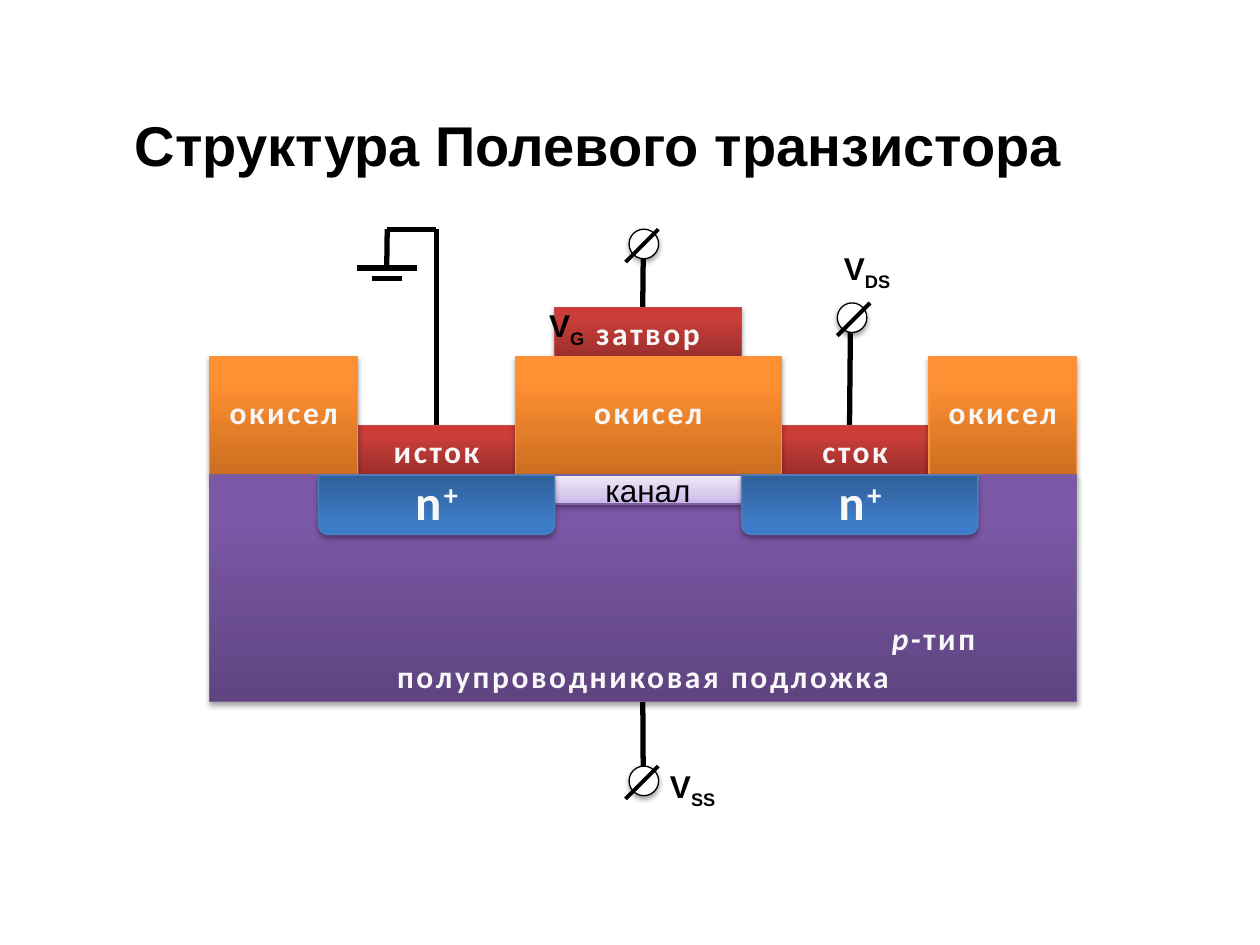
import copy
import lxml.etree
import pptx
import pptx.util
import pptx.dml.color
import pptx.enum.shapes
import pptx.enum.text
import pptx.oxml.ns

Pt = pptx.util.Pt
RGB = pptx.dml.color.RGBColor
Kind = pptx.enum.shapes.MSO_SHAPE
Align = pptx.enum.text.PP_ALIGN
Fit = pptx.enum.text.MSO_AUTO_SIZE
qn = pptx.oxml.ns.qn
sub = lxml.etree.SubElement

BLACK = RGB(0, 0, 0)
WHITE = RGB(255, 255, 255)
PALE = RGB(0xF8, 0xF8, 0xF8)
METAL = [RGB(0x9C, 0x2F, 0x2D), RGB(0xCB, 0x3E, 0x3A), RGB(0xCE, 0x3B, 0x37)]
OXIDE = [RGB(0xCC, 0x6E, 0x20), RGB(0xFF, 0x90, 0x34), RGB(0xFF, 0x91, 0x36)]
BASE = [RGB(0x5F, 0x44, 0x80), RGB(0x7B, 0x58, 0xA6), RGB(0x7C, 0x57, 0xA8)]
CANAL = [RGB(0xC9, 0xB5, 0xE8), RGB(0xD8, 0xCB, 0xEE), RGB(0xF0, 0xEA, 0xF9)]
DOPED = [RGB(0x2F, 0x5F, 0x99), RGB(0x3D, 0x7C, 0xC7), RGB(0x3A, 0x7C, 0xCB)]
RED = RGB(0xBF, 0x4C, 0x48)
ORANGE = RGB(0xF6, 0x92, 0x40)
PURPLE = RGB(0x7D, 0x60, 0xA0)
BLUE = RGB(0x4B, 0x7E, 0xBC)

deck = pptx.Presentation()
deck.slide_width, deck.slide_height = Pt(720), Pt(540)
slide = deck.slides.add_slide(deck.slide_layouts[5])
shapes = slide.shapes


def add_line(x1, y1, x2, y2, width):
    line = shapes.add_connector(
        pptx.enum.shapes.MSO_CONNECTOR.STRAIGHT, Pt(x1), Pt(y1), Pt(x2), Pt(y2))
    line.line.color.rgb = BLACK
    line.line.width = Pt(width)
    sub(line._element.spPr, qn("a:effectLst"))


def add_block(kind, x, y, w, h, edge, alpha, drop):
    block = shapes.add_shape(kind, Pt(x), Pt(y), Pt(w), Pt(h))
    block.line.color.rgb = edge
    block.line.width = Pt(0.75)
    block.shadow.inherit = False
    glow = sub(block._element.spPr.find(qn("a:effectLst")), qn("a:outerShdw"),
               blurRad=str(int(Pt(3.1))), dist=str(int(Pt(drop))),
               dir="5400000", rotWithShape="0")
    tint = sub(glow, qn("a:srgbClr"), val=str(BLACK))
    sub(tint, qn("a:alpha"), val=str(alpha * 1000))
    return block


title = shapes.title
title.left, title.top, title.width, title.height = Pt(69.8), Pt(59.8), Pt(548), Pt(46)
frame = title.text_frame
frame.text = "Структура Полевого транзистора"
frame.word_wrap = False
frame.auto_size = Fit.NONE
frame.vertical_anchor = pptx.enum.text.MSO_ANCHOR.TOP
par = frame.paragraphs[0]
par.alignment = Align.LEFT
par.font.name, par.font.size, par.font.bold = "Arial", Pt(32), True
par.font.color.rgb = BLACK

wires = [
    (367.2, 381, 367.6, 449.5),
    (249.3, 131, 249.3, 250),
    (367.6, 143.3, 367.2, 182),
    (486, 182, 485.4, 250),
    (249.3, 131, 221.3, 131),
    (221.3, 131, 221, 152.8),
    (204.2, 153.2, 238.2, 153.2),
    (212.6, 159, 229.6, 159),
]
for wire in wires:
    add_line(*wire, 3)

RECT, ROUND = Kind.RECTANGLE, Kind.ROUND_2_SAME_RECTANGLE
blocks = [
    (RECT, 204.5, 243.3, 90, 28.2, METAL, RED),
    (RECT, 446.4, 243.3, 84.4, 28.2, METAL, RED),
    (RECT, 317, 175.6, 106.6, 28.2, METAL, RED),
    (RECT, 119.9, 203.8, 84.4, 67.7, OXIDE, ORANGE),
    (RECT, 530.8, 203.8, 84.4, 67.7, OXIDE, ORANGE),
    (RECT, 294.5, 203.8, 151.9, 67.7, OXIDE, ORANGE),
    (RECT, 119.9, 271.5, 495.3, 129.5, BASE, PURPLE),
    (RECT, 317, 271.5, 106.6, 16.6, CANAL, PURPLE),
    (ROUND, 182, 271.5, 135, 33.9, DOPED, BLUE),
    (ROUND, 423.8, 271.5, 135, 33.9, DOPED, BLUE),
]
for kind, x, y, w, h, shades, edge in blocks:
    light = shades is CANAL
    block = add_block(kind, x, y, w, h, edge, 38 if light else 35, 1.6 if light else 1.8)
    block.rotation = 180 if kind == ROUND else 0
    block.fill.gradient()
    block.fill.gradient_angle = 90
    stops = block._element.spPr.find(".//" + qn("a:gsLst"))
    stops.insert(1, copy.deepcopy(stops[0]))
    spots = (0, 0.35 if light else 0.8, 1)
    for stop, spot, shade in zip(block.fill.gradient_stops, spots, shades):
        stop.position = spot
        stop.color.rgb = shade

for x, y, shift in [(359.5, 131, -2), (478.5, 173.1, 0), (359.5, 437.8, -2)]:
    ring = add_block(Kind.OVAL, x, y, 16.9, 16.9, BLACK, 38, 1.6)
    ring.fill.solid()
    ring.fill.fore_color.rgb = WHITE
    add_line(x + shift, y + 18.7, x + shift + 18.7, y, 2.25)

MID, LEFT = Align.CENTER, Align.LEFT
PART = ("Calibri", 18, PALE, True, MID, 150)
ZONE = ("Calibri", 28, PALE, True, MID, 150)
TYPE = ("Calibri", 18, PALE, True, LEFT, 150)
PLAIN = ("Arial", 18, BLACK, False, MID, 0)
VOLT = ("Arial", 18, BLACK, True, LEFT, 0)
labels = [
    (204.5, 243.3, 90, "исток", "", 0, PART),
    (317, 175.6, 106.6, "затвор", "", 0, PART),
    (446.4, 243.3, 84.4, "сток", "", 0, PART),
    (204.5, 371.8, 326.3, "полупроводниковая подложка", "", 0, PART),
    (317, 265.8, 106.6, "канал", "", 0, PLAIN),
    (119.9, 221, 84.4, "окисел", "", 0, PART),
    (294.5, 221, 151.9, "окисел", "", 0, PART),
    (530.8, 221, 84.4, "окисел", "", 0, PART),
    (204.5, 265.8, 90, "n", "+", 30, ZONE),
    (446.4, 265.8, 90, "n", "+", 30, ZONE),
    (502.6, 350, 112.6, "p", "-тип", 0, TYPE),
    (306.7, 171.4, 45, "V", "G", -25, VOLT),
    (475.2, 139, 55.4, "V", "DS", -25, VOLT),
    (375.8, 434.9, 47.5, "V", "SS", -25, VOLT),
]
for x, y, w, head, tail, shift, (face, size, color, bold, align, gap) in labels:
    box = shapes.add_textbox(Pt(x), Pt(y), Pt(w), Pt(41 if size == 28 else 29))
    box.text_frame.word_wrap = True
    box.text_frame.auto_size = Fit.SHAPE_TO_FIT_TEXT
    par = box.text_frame.paragraphs[0]
    par.alignment = align
    par.font.name, par.font.size, par.font.bold = face, Pt(size), bold
    par.font.color.rgb = color
    for text in filter(None, (head, tail)):
        run = par.add_run()
        run.text = text
        if gap:
            run._r.get_or_add_rPr().set("spc", str(gap))
        if text == tail and shift:
            run._r.get_or_add_rPr().set("baseline", str(shift * 1000))
        if text == "p":
            run.font.italic = True

deck.save("out.pptx")
